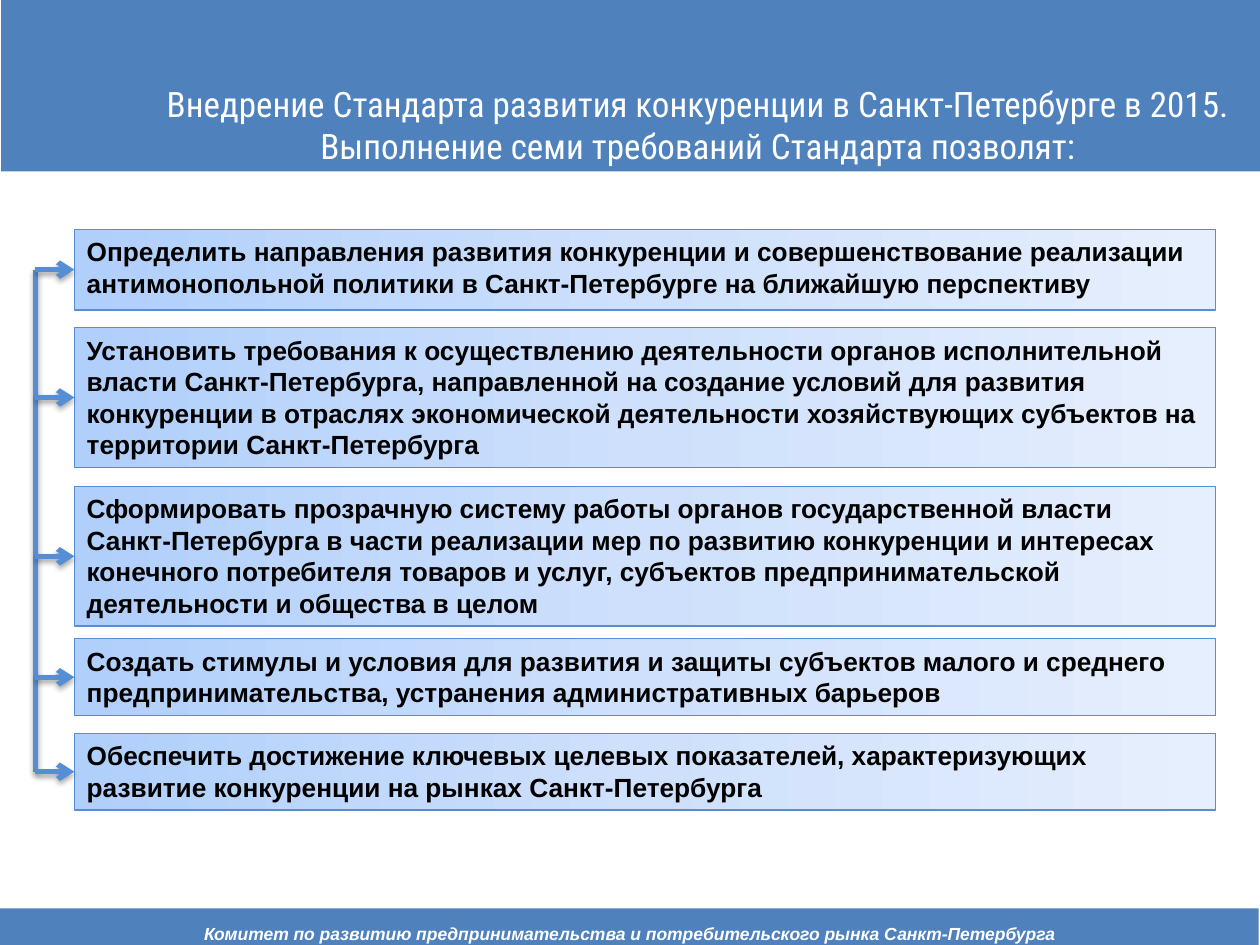
"""Build a slide listing what the competition standard makes possible."""
import copy
import pptx
import pptx.dml.color
import pptx.enum.shapes
import pptx.enum.text
import pptx.oxml
import pptx.oxml.ns
import pptx.util

Inches, Pt = pptx.util.Inches, pptx.util.Pt
RECT = pptx.enum.shapes.MSO_SHAPE.RECTANGLE
LINE = pptx.enum.shapes.MSO_CONNECTOR.STRAIGHT
ALIGN = pptx.enum.text.PP_ALIGN
ANCHOR = pptx.enum.text.MSO_ANCHOR
FIT = pptx.enum.text.MSO_AUTO_SIZE
HUES = {"band": "4F81BD", "edge": "558ED5", "white": "FFFFFF", "black": "000000",
        "start": "B0CFFB", "mid": "CEE0FC", "end": "E6EFFD"}
RGB = {name: pptx.dml.color.RGBColor.from_string(hue) for name, hue in HUES.items()}
NS = pptx.oxml.ns.nsdecls("a")
SHADOW = (f'<a:effectLst {NS}><a:outerShdw blurRad="40000" dist="23000" dir="5400000" '
          f'rotWithShape="0"><a:srgbClr val="{HUES["black"]}"><a:alpha val="35000"/>'
          '</a:srgbClr></a:outerShdw></a:effectLst>')


def write(shape, text, size, hue, face="Arial", bold=True, italic=False,
          align=ALIGN.CENTER, anchor=ANCHOR.MIDDLE, fit=FIT.NONE):
    frame = shape.text_frame
    frame.word_wrap = True
    frame.auto_size = fit
    frame.vertical_anchor = anchor
    para = frame.paragraphs[0]
    para.alignment = align
    run = para.add_run()
    run.text = text
    run.font.name, run.font.size = face, Pt(size)
    run.font.bold, run.font.italic = bold, italic
    run.font.color.rgb = RGB[hue]


def link(left, top, right, base):
    line = slide.shapes.add_connector(LINE, Inches(left), Inches(top), Inches(right), Inches(base))
    line.line.color.rgb = RGB["edge"]
    line.line.width = Pt(3)
    line._element.spPr.append(pptx.oxml.parse_xml(SHADOW))
    return line


deck = pptx.Presentation()
deck.slide_width, deck.slide_height = Inches(10), Inches(7.5)
slide = deck.slides.add_slide(deck.slide_layouts[5])

bands = []
for left, top, height in [(0.01, -0.03, 1.39), (0, 7.21, 0.4)]:
    band = slide.shapes.add_shape(RECT, Inches(left), Inches(top), Inches(9.99), Inches(height))
    band.shadow.inherit = False
    band.fill.solid()
    band.fill.fore_color.rgb = RGB["band"]
    band.line.fill.background()
    bands.append(band)
write(bands[1], "Комитет по развитию предпринимательства и потребительского рынка Санкт-Петербурга",
      10, "white", italic=True)

title = slide.shapes.title
title.left, title.top, title.width, title.height = Inches(1.04), Inches(0.75), Inches(9), Inches(0.48)
write(title, "Внедрение Стандарта развития конкуренции в Санкт-Петербурге в 2015. "
      "Выполнение семи требований Стандарта позволят:", 20, "white", "Roboto Condensed", bold=False)
slide.shapes._spTree.append(title._element)

goals = [
    (1.82, 0.64, "Определить направления развития конкуренции и совершенствование реализации "
     "антимонопольной политики в Санкт-Петербурге на ближайшую перспективу"),
    (2.6, 1.11, "Установить требования к осуществлению деятельности органов исполнительной власти "
     "Санкт-Петербурга, направленной на создание условий для развития конкуренции в отраслях "
     "экономической деятельности хозяйствующих субъектов на территории Санкт-Петербурга"),
    (3.86, 1.11, "Сформировать прозрачную систему работы органов государственной власти "
     "Санкт-Петербурга в части реализации мер по развитию конкуренции и интересах конечного "
     "потребителя товаров и услуг, субъектов предпринимательской деятельности и общества в целом"),
    (5.07, 0.61, "Создать стимулы и условия для развития и защиты субъектов малого и среднего "
     "предпринимательства, устранения административных барьеров"),
    (5.82, 0.61, "Обеспечить достижение ключевых целевых показателей, характеризующих развитие "
     "конкуренции на рынках Санкт-Петербурга"),
]
rail, edge = 0.28, 0.59
mids = [top + height / 2 for top, height, text in goals]
boxes = []
for top, height, text in goals:
    box = slide.shapes.add_shape(RECT, Inches(edge), Inches(top), Inches(9.06), Inches(height))
    box.shadow.inherit = False
    box.fill.gradient()
    box.fill.gradient_angle = 0
    stops = box._element.spPr.find(".//" + pptx.oxml.ns.qn("a:gsLst"))
    stops.insert(1, copy.deepcopy(stops[0]))
    for stop, place, hue in zip(box.fill.gradient_stops, (0, 0.5, 1), ("start", "mid", "end")):
        stop.position = place
        stop.color.rgb = RGB[hue]
    box.line.color.rgb = RGB["edge"]
    box.line.width = Pt(0.75)
    write(box, text, 15, "black", align=ALIGN.LEFT, anchor=ANCHOR.TOP, fit=FIT.SHAPE_TO_FIT_TEXT)
    boxes.append(box)

link(rail, mids[0], rail, mids[-1])
for box, mid in zip(boxes, mids):
    arrow = link(rail, mid, edge, mid)
    arrow.end_connect(box, 1)
    arrow.line._get_or_add_ln().append(pptx.oxml.parse_xml(f'<a:tailEnd {NS} type="arrow"/>'))

deck.save("out.pptx")
